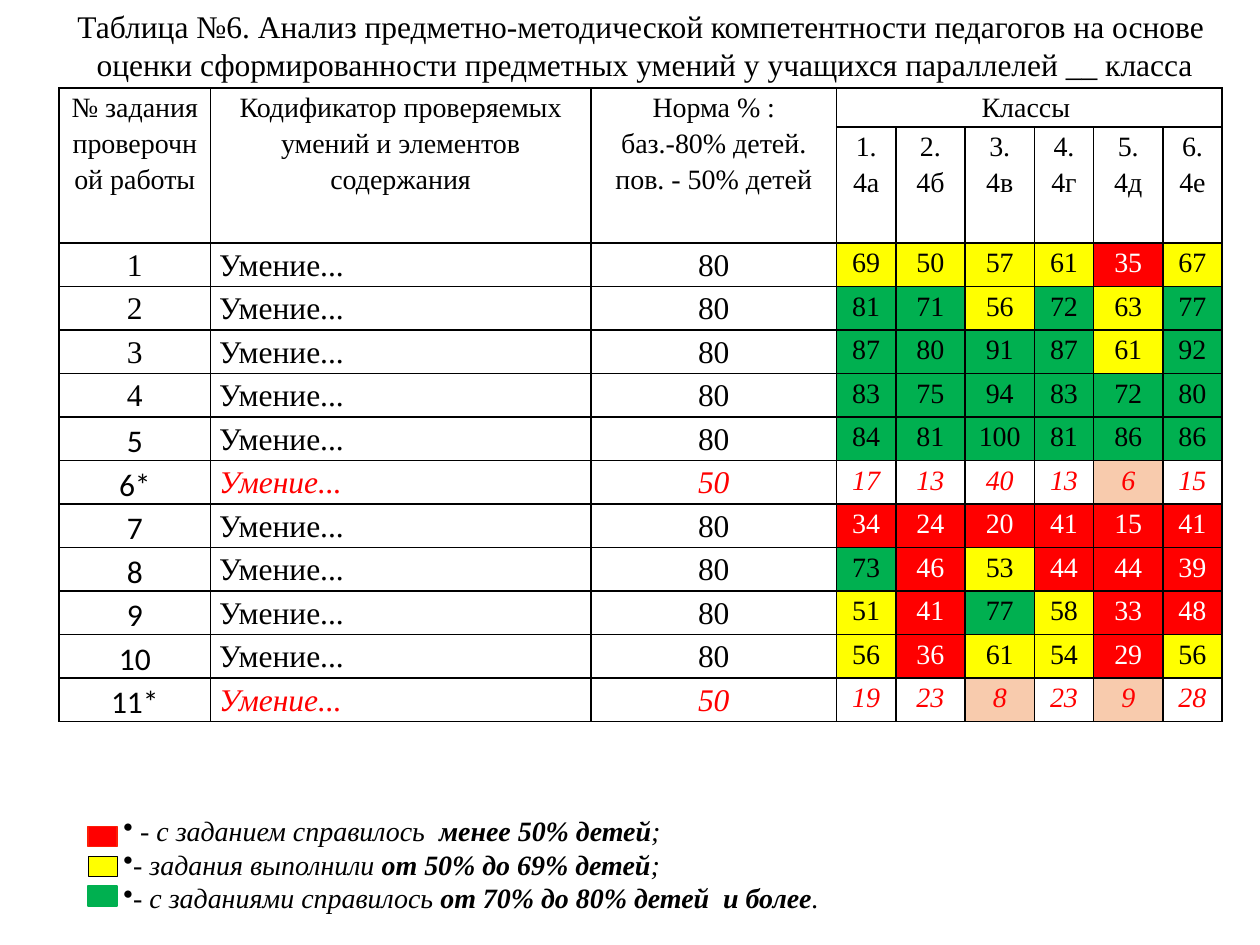
from pptx import Presentation
from pptx.util import Inches, Pt
from pptx.dml.color import RGBColor
from pptx.enum.shapes import MSO_SHAPE
from pptx.enum.text import PP_ALIGN, MSO_ANCHOR, MSO_AUTO_SIZE
from pptx.oxml import parse_xml
from pptx.oxml.ns import nsdecls
from lxml.etree import SubElement

theme = {
    "black": "000000", "white": "FFFFFF", "red": "FF0000", "yellow": "FFFF00",
    "green": "00B050", "peach": "F8CBAD", "edge": "FD1E07",
    "big": Pt(18), "small": Pt(16), "serif": "Times New Roman", "sans": "Calibri",
}
rgb = {key: RGBColor.from_string(val) for key, val in theme.items()
       if isinstance(val, str) and len(val) == 6}


def write(para, text, color="black", **form):
    run = para.add_run()
    run.text = text
    base = {"name": theme["serif"], "size": theme["small"], "italic": False, "bold": False}
    for key, val in (base | form).items():
        setattr(run.font, key, val)
    run.font.color.rgb = rgb[color]


def put(cell, text, fill=None, align=PP_ALIGN.CENTER, **form):
    edges = {"margin_left": Inches(0.07), "margin_right": Inches(0.07),
             "margin_top": 0, "margin_bottom": 0}
    for key, val in edges.items():
        setattr(cell, key, val)
    for num, line in enumerate(text.split("\n")):
        para = cell.text_frame.add_paragraph() if num else cell.text_frame.paragraphs[0]
        para.alignment, para.line_spacing = align, 1.15
        write(para, line, **form)
    if fill:
        cell.fill.solid()
        cell.fill.fore_color.rgb = rgb[fill]


deck = Presentation()
deck.slide_width, deck.slide_height = Inches(10), Inches(7.5)
slide = deck.slides.add_slide(deck.slide_layouts[6])
shapes = slide.shapes

title = shapes.add_textbox(Inches(0.47), 0, Inches(9.3), Inches(0.71)).text_frame
title.word_wrap = False
title.auto_size = MSO_AUTO_SIZE.SHAPE_TO_FIT_TEXT
title.vertical_anchor = MSO_ANCHOR.MIDDLE
heads = ["Таблица №6. Анализ предметно-методической компетентности педагогов на основе ",
         "оценки сформированности предметных умений у учащихся параллелей __ класса"]
for num, line in enumerate(heads):
    para = title.add_paragraph() if num else title.paragraphs[0]
    para.alignment = PP_ALIGN.CENTER
    write(para, line, size=theme["big"])

scores = [
    [69, 50, 57, 61, 35, 67],
    [81, 71, 56, 72, 63, 77],
    [87, 80, 91, 87, 61, 92],
    [83, 75, 94, 83, 72, 80],
    [84, 81, 100, 81, 86, 86],
    [17, 13, 40, 13, 6, 15],
    [34, 24, 20, 41, 15, 41],
    [73, 46, 53, 44, 44, 39],
    [51, 41, 77, 58, 33, 48],
    [56, 36, 61, 54, 29, 56],
    [19, 23, 8, 23, 9, 28],
]
hard = {6, 11}
wide = [1.2, 3.02, 1.95, 0.47, 0.55, 0.55, 0.47, 0.55, 0.47]
high = [0.31, 0.92] + [0.345] * len(scores)
frame = shapes.add_table(len(high), len(wide), Inches(0.47), Inches(0.7),
                         Inches(sum(wide)), Inches(sum(high)))
table = frame.table
table.first_row = table.horz_banding = False
for col, size in zip(table.columns, wide):
    col.width = Inches(size)
for row, size in zip(table.rows, high):
    row.height = Inches(size)

for cell in table.iter_cells():
    cell.fill.background()
    props = cell._tc.get_or_add_tcPr()
    for num, side in enumerate("LRTB"):
        props.insert(num, parse_xml(
            f'<a:ln{side} {nsdecls("a")} w="12700"><a:solidFill>'
            f'<a:srgbClr val="{theme["black"]}"/></a:solidFill></a:ln{side}>'))

tops = ["№ задания проверочной работы",
        "Кодификатор проверяемых умений и элементов содержания",
        "Норма % :\nбаз.-80% детей.\nпов. - 50% детей"]
for col, text in enumerate(tops):
    table.cell(0, col).merge(table.cell(1, col))
    put(table.cell(0, col), text)
table.cell(0, 3).merge(table.cell(0, 8))
put(table.cell(0, 3), "Классы ")
for num, mark in enumerate("абвгде"):
    put(table.cell(1, 3 + num), f"{num + 1}.\n4{mark}")

for num, marks in enumerate(scores, 1):
    row = num + 1
    star = num in hard
    look = {"color": "red" if star else "black", "italic": star}
    face = theme["sans" if num > 4 else "serif"]
    put(table.cell(row, 0), f"{num}*" if star else str(num), size=theme["big"], name=face)
    put(table.cell(row, 1), "Умение...", align=PP_ALIGN.LEFT, size=theme["big"], **look)
    put(table.cell(row, 2), "50" if star else "80", size=theme["big"], **look)
    for col, mark in enumerate(marks, 3):
        if star:
            fill, ink = "peach" if mark < 10 else None, "red"
        elif mark < 50:
            fill, ink = "red", "white"
        else:
            fill, ink = "yellow" if mark < 70 else "green", "black"
        put(table.cell(row, col), str(mark), fill, color=ink, italic=star)

legend = [
    (" - с заданием справилось  ", "менее 50% детей", ";", "red", "edge", 1),
    ("- задания выполнили ", "от 50% до 69% детей", ";", "yellow", "black", 0.25),
    ("- с заданиями справилось ", "от 70% до 80% детей  и более", ".", "green", "green", 1),
]
notes = shapes.add_textbox(Inches(0.39), Inches(6.41), Inches(9.61), Inches(0.91)).text_frame
notes.word_wrap = True
notes.auto_size = MSO_AUTO_SIZE.SHAPE_TO_FIT_TEXT
for num, (lead, key, end, fill, edge, thick) in enumerate(legend):
    para = notes.add_paragraph() if num else notes.paragraphs[0]
    props = para._p.get_or_add_pPr()
    props.set("marL", "0")
    props.set("indent", str(Inches(0.49)))
    SubElement(props, "{http://schemas.openxmlformats.org/drawingml/2006/main}buChar", char="•")
    for text, bold in ((lead, False), (key, True), (end, False)):
        write(para, text, italic=True, bold=bold)
    box = shapes.add_shape(MSO_SHAPE.RECTANGLE, Inches(0.7), Inches(6.56 + 0.235 * num),
                           Inches(0.23), Inches(0.16))
    box.shadow.inherit = False
    box.fill.solid()
    box.fill.fore_color.rgb = rgb[fill]
    box.line.color.rgb = rgb[edge]
    box.line.width = Pt(thick)

deck.save("out.pptx")
